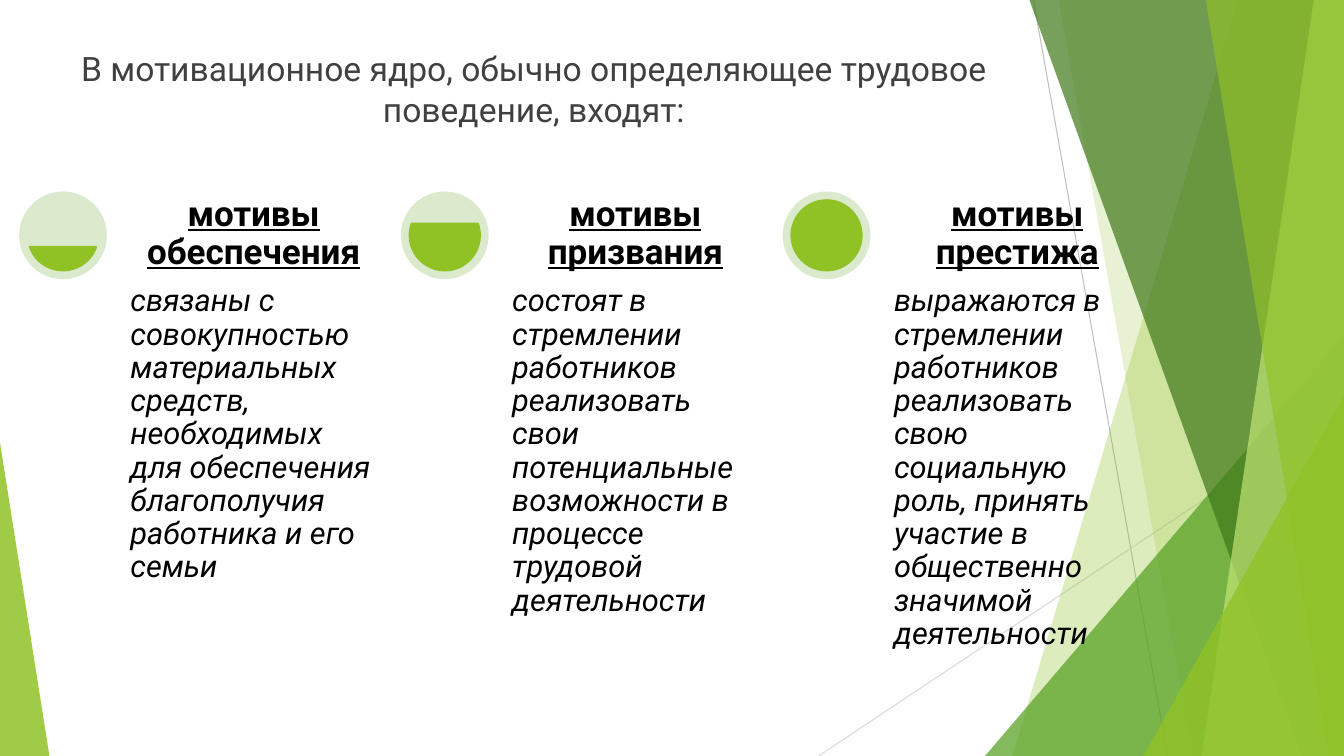
from math import asin, degrees

from lxml.etree import SubElement
from pptx import Presentation
from pptx.dml.color import RGBColor
from pptx.enum.shapes import MSO_CONNECTOR, MSO_SHAPE
from pptx.enum.text import MSO_ANCHOR, MSO_AUTO_SIZE, PP_ALIGN
from pptx.oxml.ns import qn
from pptx.util import Inches, Pt

WIDTH, HEIGHT = 13.33, 7.5
FONT = "Roboto"

LIME = RGBColor(0x90, 0xC2, 0x26)
LEAF = RGBColor(0x54, 0xA0, 0x21)
FOREST = RGBColor(0x3F, 0x78, 0x19)
PALE_LIME = RGBColor(0xC0, 0xE4, 0x74)
MIST = RGBColor(0xDB, 0xE9, 0xCD)
GREY = RGBColor(0xBF, 0xBF, 0xBF)
LIGHT_GREY = RGBColor(0xD9, 0xD9, 0xD9)
DARK_GREY = RGBColor(0x40, 0x40, 0x40)
BLACK = RGBColor(0, 0, 0)

TITLE = "В мотивационное ядро, обычно определяющее трудовое поведение, входят:"
# Heading, description, share of the gauge that is filled
MOTIVES = [
    ("мотивы обеспечения",
     "связаны с совокупностью материальных средств, необходимых "
     "для обеспечения благополучия работника и его семьи", 1 / 3),
    ("мотивы призвания",
     "состоят в стремлении работников реализовать свои потенциальные "
     "возможности в процессе трудовой деятельности", 2 / 3),
    ("мотивы престижа",
     "выражаются в стремлении работников реализовать свою социальную роль, "
     "принять участие в общественно значимой деятельности", 1),
]

# Line ends and colour
RAYS = [
    ((10.25, 0), (11.58, HEIGHT), GREY),
    ((WIDTH, 4.03), (8.12, HEIGHT), LIGHT_GREY),
]
# Bands reach the right edge: x at the top, x at the bottom, colour, opacity.
# Corners: left, top, width, share of the apex, colour, opacity.
BAND, CORNER = "band", "corner"
FACETS = [
    (BAND, 12.28, 10.04, LIME, 30),
    (BAND, 10.5, 11.83, LIME, 20),
    (CORNER, 9.77, 3.33, 3.56, 1, LEAF, 72),
    (BAND, 10.21, 12.91, FOREST, 70),
    (BAND, 13.03, 11.92, PALE_LIME, 70),
    (BAND, 11.96, 13.18, LIME, 65),
    (CORNER, 11.34, 3.93, 1.99, 1, LIME, 80),
    (CORNER, 0, 4.39, 0.49, 0, LIME, 85),
]


def paint(shape, color, opacity=100):
    shape.shadow.inherit = False
    shape.line.fill.background()
    shape.fill.solid()
    shape.fill.fore_color.rgb = color
    if opacity < 100:
        srgb = shape.fill._xPr.find(".//" + qn("a:srgbClr"))
        SubElement(srgb, qn("a:alpha")).set("val", str(opacity * 1000))


def add_preset(shapes, kind, box, color, opacity=100):
    shape = shapes.add_shape(kind, *map(Inches, box))
    paint(shape, color, opacity)
    return shape


def format_text(frame, size, color, align, anchor, bold=None, italic=None,
                underline=None, spacing=1.0):
    frame.word_wrap = True
    frame.auto_size = MSO_AUTO_SIZE.NONE
    frame.vertical_anchor = anchor
    paragraph = frame.paragraphs[0]
    paragraph.alignment = align
    paragraph.line_spacing = spacing
    for run in paragraph.runs:
        font = run.font
        font.name, font.size, font.color.rgb = FONT, Pt(size), color
        font.bold, font.italic, font.underline = bold, italic, underline


def add_backdrop(shapes, width, height):
    """Thin rays and translucent facets along the slide edges."""
    for start, end, color in RAYS:
        ray = shapes.add_connector(MSO_CONNECTOR.STRAIGHT,
                                   *map(Inches, start + end))
        ray.line.color.rgb = color
        ray.line.width = Pt(0.75)
        SubElement(ray._element.spPr, qn("a:effectLst"))
    for kind, *facet in FACETS:
        if kind == BAND:
            top_x, bottom_x, color, opacity = facet
            builder = shapes.build_freeform(Inches(top_x), 0)
            builder.add_line_segments(
                [(Inches(x), Inches(y)) for x, y in
                 ((width, 0), (width, height), (bottom_x, height))])
            paint(builder.convert_to_shape(), color, opacity)
        else:
            left, top, span, apex, color, opacity = facet
            corner = add_preset(shapes, MSO_SHAPE.ISOSCELES_TRIANGLE,
                                (left, top, span, height - top), color, opacity)
            corner.adjustments[0] = apex


def add_title(title, box):
    title.left, title.top, title.width, title.height = map(Inches, box)
    title.text_frame.text = TITLE
    format_text(title.text_frame, 24, DARK_GREY, PP_ALIGN.CENTER, MSO_ANCHOR.TOP)


def add_gauge(shapes, left, top, size, level):
    """Disc filled from the bottom up to the given level."""
    add_preset(shapes, MSO_SHAPE.OVAL, (left, top, size, size), MIST)
    rim = size / 10
    inner = size - 2 * rim
    filling = add_preset(shapes, MSO_SHAPE.CHORD,
                         (left + rim, top + rim, inner, inner), LIME)
    filling.line.color.rgb = LIME
    filling.line.width = Pt(1.5)
    # Chord angles are stored in units of 1/0.6 degree
    angle = degrees(asin(1 - 2 * level))
    filling.adjustments[0] = angle % 360 * 0.6
    filling.adjustments[1] = (180 - angle) * 0.6


def add_label(shapes, box, text, inset, *style, **emphasis):
    frame = shapes.add_textbox(*map(Inches, box)).text_frame
    frame.margin_left = frame.margin_right = Inches(inset)
    frame.margin_top = frame.margin_bottom = Inches(inset)
    frame.text = text
    format_text(frame, *style, spacing=0.9, **emphasis)


def add_motive(shapes, left, top, width, height, motive):
    heading, description, level = motive
    gauge = 0.87
    text_left, text_width = left + 1.2 * gauge, width - 1.2 * gauge
    add_gauge(shapes, left, top, gauge, level)
    add_label(shapes, (text_left, top + gauge, text_width, height - gauge),
              description, 0.06, 22, BLACK, PP_ALIGN.LEFT, MSO_ANCHOR.TOP,
              italic=True)
    add_label(shapes, (text_left, top, text_width, gauge),
              heading, 0.07, 25, BLACK, PP_ALIGN.CENTER, MSO_ANCHOR.BOTTOM,
              bold=True, underline=True)


def add_motives(shapes, left, top, width, height):
    """Equal columns, one per motive."""
    gap = 0.18
    column = (width - gap * (len(MOTIVES) - 1)) / len(MOTIVES)
    for index, motive in enumerate(MOTIVES):
        add_motive(shapes, left + index * (column + gap), top, column, height,
                   motive)


def main():
    deck = Presentation()
    deck.slide_width, deck.slide_height = Inches(WIDTH), Inches(HEIGHT)
    slide = deck.slides.add_slide(deck.slide_layouts[5])
    add_backdrop(slide.shapes, WIDTH, HEIGHT)
    add_title(slide.shapes.title, (0.19, 0.43, 10.21, 0.62))
    add_motives(slide.shapes, 0.19, 1.9, 11.18, 4.51)
    deck.save("out.pptx")


if __name__ == "__main__":
    main()
